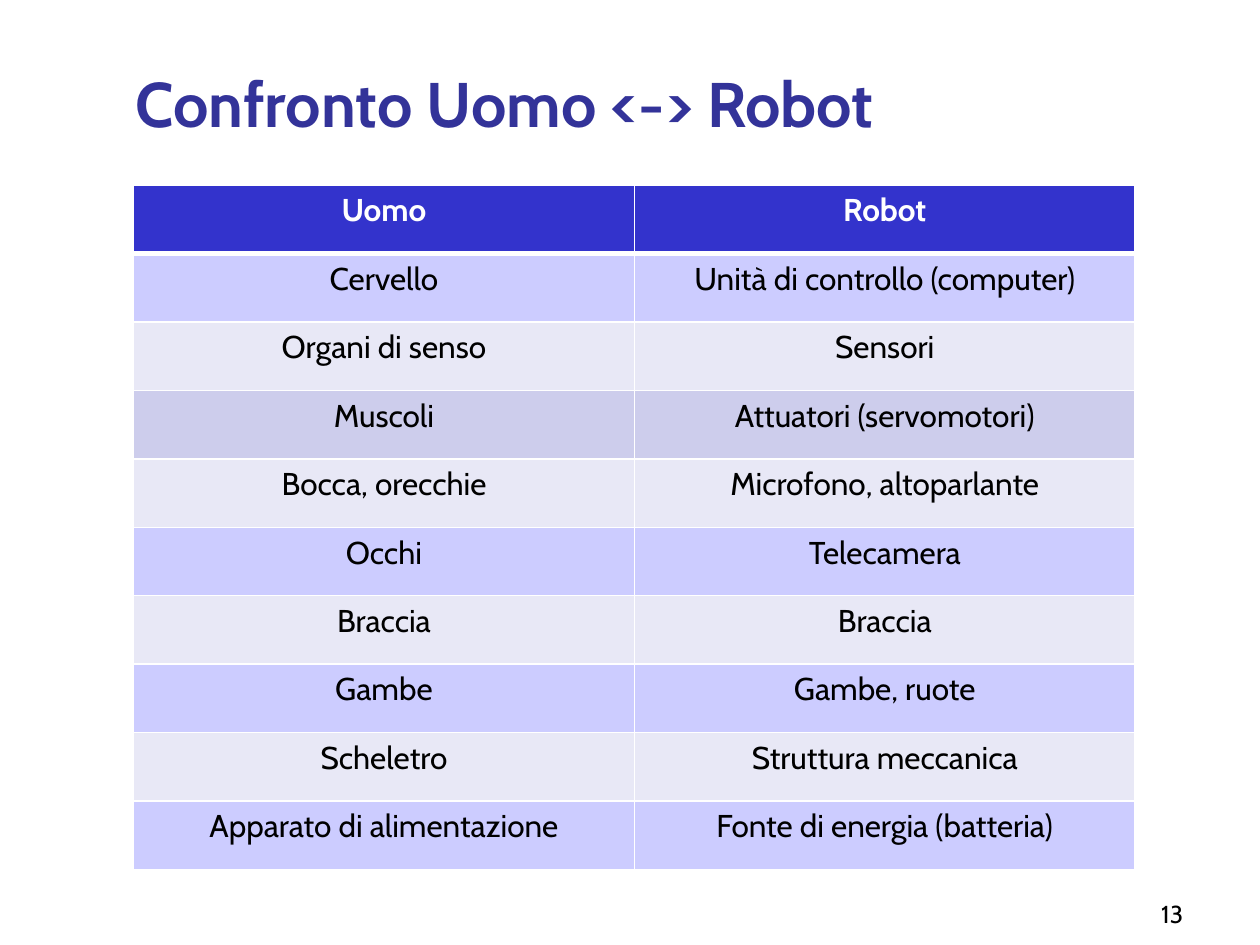
from lxml import etree
from pptx import Presentation
from pptx.dml.color import RGBColor
from pptx.enum import text
from pptx.oxml import ns
from pptx.util import Inches, Pt

WHITE = RGBColor(0xFF, 0xFF, 0xFF)
BLACK = RGBColor(0, 0, 0)
NAVY = RGBColor(0x33, 0x33, 0x99)
BLUE = RGBColor(0x33, 0x33, 0xCC)
LILAC = RGBColor(0xCC, 0xCC, 0xFF)
PALE = RGBColor(0xE8, 0xE8, 0xF6)
GREY = RGBColor(0xCD, 0xCD, 0xEC)

ROWS = [
    ("Uomo", "Robot", BLUE),
    ("Cervello", "Unità di controllo (computer)", LILAC),
    ("Organi di senso", "Sensori", PALE),
    ("Muscoli", "Attuatori (servomotori)", GREY),
    ("Bocca, orecchie", "Microfono, altoparlante", PALE),
    ("Occhi", "Telecamera", LILAC),
    ("Braccia", "Braccia", PALE),
    ("Gambe", "Gambe, ruote", LILAC),
    ("Scheletro", "Struttura meccanica", PALE),
    ("Apparato di alimentazione", "Fonte di energia (batteria)", LILAC),
]


def style(par, size, color, bold, align):
    par.alignment = align
    font = par.font
    font.name, font.size, font.bold = "Cabin", Pt(size), bold
    font.color.rgb = color


def border(cell, side, width):
    """Draw a white line on one side (L, R, T or B) of a cell."""
    props = cell._tc.get_or_add_tcPr()
    line = etree.SubElement(props, ns.qn("a:ln" + side), w=str(Pt(width)))
    fill = etree.SubElement(line, ns.qn("a:solidFill"))
    etree.SubElement(fill, ns.qn("a:srgbClr"), val=str(WHITE))


prs = Presentation()
prs.slide_width, prs.slide_height = Inches(10), Inches(7.5)
slide = prs.slides.add_slide(prs.slide_layouts[6])

# Title and page number
LEFT, RIGHT = text.PP_ALIGN.LEFT, text.PP_ALIGN.RIGHT
for words, area, size, color, bold, align, space in [
    ("Confronto Uomo <-> Robot", (0.98, 0.44, 8.03, 0.72), 36, NAVY, True, LEFT, 1.05),
    ("13", (7.42, 6.92, 2.07, 0.5), 14, BLACK, False, RIGHT, 1),
]:
    frame = slide.shapes.add_textbox(*map(Inches, area)).text_frame
    frame.word_wrap = True
    frame.vertical_anchor = text.MSO_ANCHOR.BOTTOM
    frame.text = words
    par = frame.paragraphs[0]
    par.line_spacing = space
    style(par, size, color, bold, align)

# Comparison table
table = slide.shapes.add_table(
    len(ROWS), 2, Inches(1.06), Inches(1.47), Inches(7.95), Inches(5.43)
).table
for r, (*words, shade) in enumerate(ROWS):
    head = r == 0
    for c, word in enumerate(words):
        cell = table.cell(r, c)
        cell.text = word
        style(cell.text_frame.paragraphs[0], 18, WHITE if head else BLACK,
              head, text.PP_ALIGN.CENTER)
        border(cell, "L", 0.96)
        border(cell, "R", 0.96)
        border(cell, "T", 3 if r == 1 else 0.96)
        border(cell, "B", 3 if head else 0.96)
        cell.fill.solid()
        cell.fill.fore_color.rgb = shade

prs.save("out.pptx")
